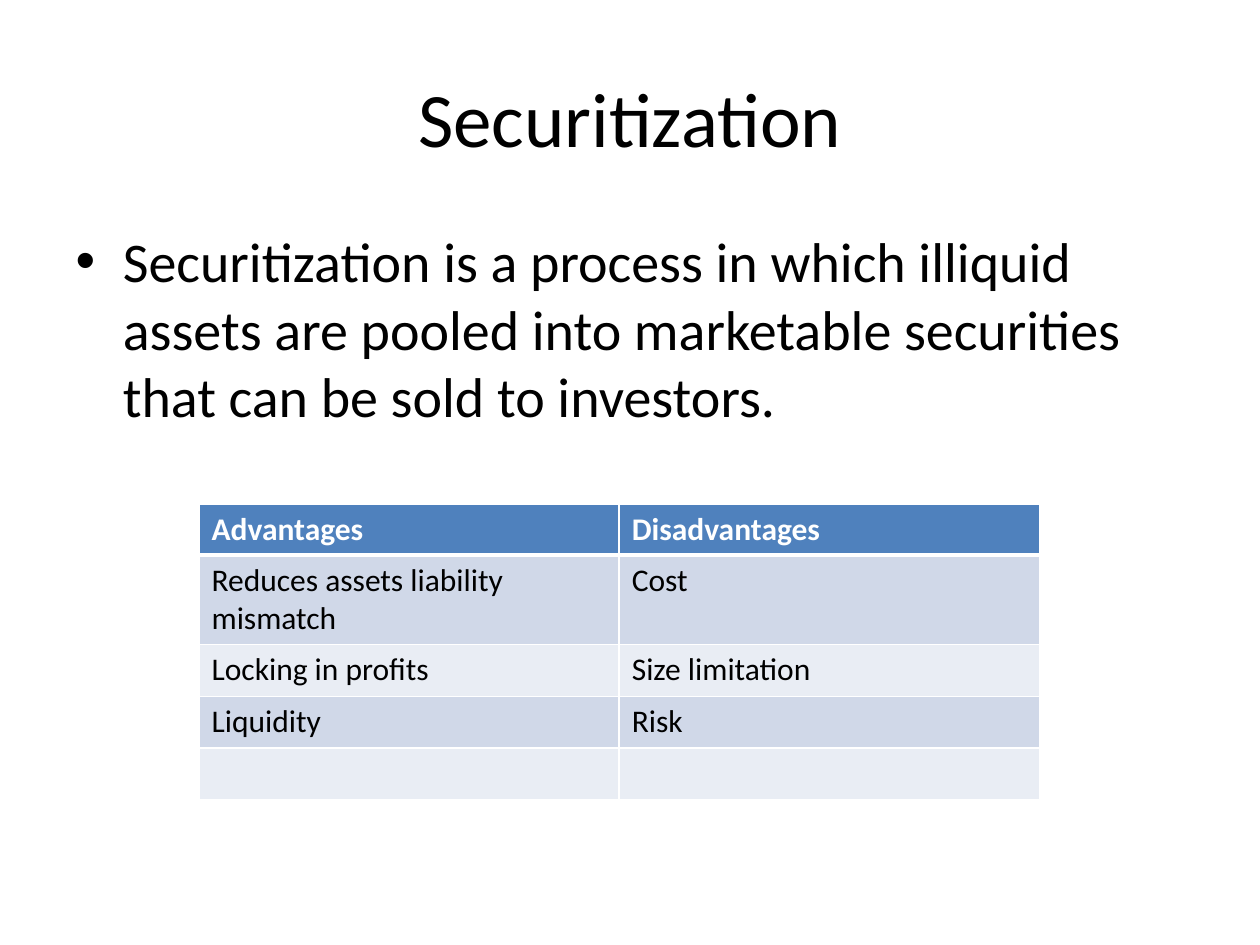
from lxml import etree
from pptx import Presentation
from pptx import util as u
from pptx.dml.color import RGBColor
from pptx.enum import text
from pptx.oxml import ns

FONT = "Calibri"
COLORS = {"ink": "000000", "white": "FFFFFF", "head": "4F81BD",
          "odd": "D0D8E8", "even": "E9EDF4"}
ROWS = [
    ("Advantages", "Disadvantages"),
    ("Reduces assets liability mismatch", "Cost"),
    ("Locking in profits", "Size limitation"),
    ("Liquidity", "Risk"),
    ("", ""),
]
HEIGHTS = [0.4, 0.7, 0.41, 0.41, 0.41]


def color(name):
    return RGBColor.from_string(COLORS[name])


def place(shape, *box):
    shape.left, shape.top, shape.width, shape.height = map(u.Inches, box)


def style(font, size, ink="ink", bold=False):
    font.name, font.size, font.bold = FONT, u.Pt(size), bold
    font.color.rgb = color(ink)


def add_run(para, words, size, ink="ink", bold=False):
    run = para.add_run()
    run.text = words
    style(run.font, size, ink, bold)


def add_title(slide, words):
    title = slide.shapes.title
    place(title, 0.5, 0.3, 9, 1.25)
    frame = title.text_frame
    frame.vertical_anchor = text.MSO_ANCHOR.MIDDLE
    para = frame.paragraphs[0]
    para.alignment = text.PP_ALIGN.CENTER
    add_run(para, words, 44)


def add_body(slide, words):
    body = slide.placeholders[1]
    place(body, 0.5, 1.75, 9, 4.95)
    add_run(body.text_frame.paragraphs[0], words, 32)


def add_edges(cell, low):
    """Draw white cell borders, with the bottom one `low` points wide."""
    props = cell._tc.get_or_add_tcPr()
    for spot, (side, width) in enumerate(
            [("L", 1), ("R", 1), ("T", 1), ("B", low)]):
        line = etree.Element(ns.qn(f"a:ln{side}"), w=str(u.Pt(width)))
        fill = etree.SubElement(line, ns.qn("a:solidFill"))
        etree.SubElement(fill, ns.qn("a:srgbClr"), val=COLORS["white"])
        props.insert(spot, line)


def fill_cell(cell, words, row):
    head = row == 0
    cell.fill.solid()
    cell.fill.fore_color.rgb = color(
        "head" if head else "odd" if row % 2 else "even")
    add_edges(cell, 3 if head else 1)
    para = cell.text_frame.paragraphs[0]
    if words:
        add_run(para, words, 18, "white" if head else "ink", head)
    else:
        style(para.font, 18)


def add_grid(slide):
    frame = slide.shapes.add_table(
        len(ROWS), 2, u.Inches(1.58), u.Inches(4),
        u.Inches(6.67), u.Inches(sum(HEIGHTS)))
    grid = frame.table
    for row, (words, height) in enumerate(zip(ROWS, HEIGHTS)):
        grid.rows[row].height = u.Inches(height)
        for col, word in enumerate(words):
            fill_cell(grid.cell(row, col), word, row)


def main():
    deck = Presentation()
    deck.slide_width, deck.slide_height = u.Inches(10), u.Inches(7.5)
    slide = deck.slides.add_slide(deck.slide_layouts[1])

    # Heading and definition
    add_title(slide, "Securitization")
    add_body(slide, "Securitization is a process in which illiquid assets "
                    "are pooled into marketable securities that can be "
                    "sold to investors.")

    # Pros and cons
    add_grid(slide)
    deck.save("out.pptx")


if __name__ == "__main__":
    main()
